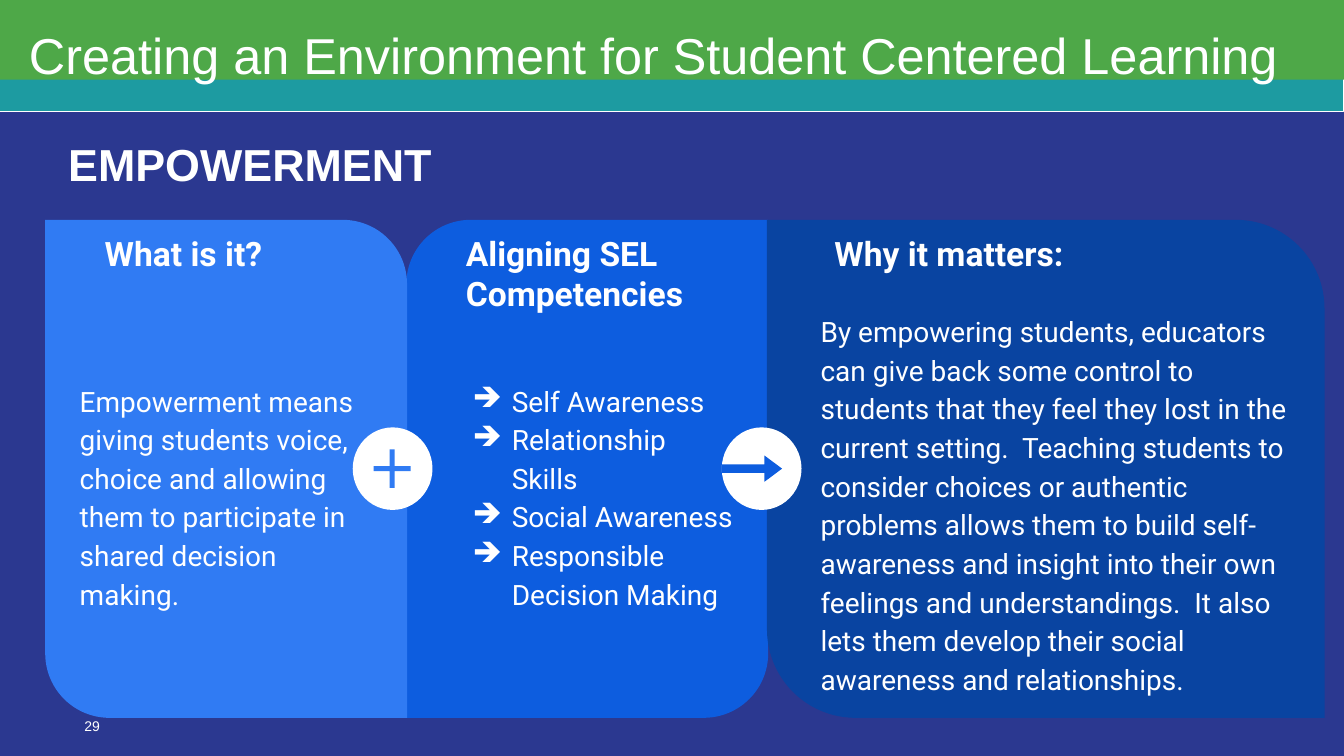
from pptx import Presentation
from pptx.dml.color import RGBColor
from pptx.enum import shapes, text
from pptx.oxml import parse_xml
from pptx.oxml.ns import nsdecls
from pptx.util import Cm, Pt

NAVY = RGBColor(0x2B, 0x38, 0x90)
TEAL = RGBColor(0x1D, 0x9B, 0xA1)
GREEN = RGBColor(0x4E, 0xA8, 0x48)
SKY = RGBColor(0x30, 0x7B, 0xF3)
BLUE = RGBColor(0x0D, 0x5D, 0xDF)
DEEP = RGBColor(0x09, 0x44, 0xA1)
WHITE = RGBColor(0xFF, 0xFF, 0xFF)
KIND = shapes.MSO_SHAPE
WIDE, HIGH = 33.87, 19.05


class Deck:
    """Holds the style and the current slide; lengths are in centimetres."""

    def __init__(self):
        self.prs = Presentation()
        self.prs.slide_width, self.prs.slide_height = Cm(WIDE), Cm(HIGH)
        self.slide = self.prs.slides.add_slide(self.prs.slide_layouts[5])
        fill = self.slide.background.fill
        fill.solid()
        fill.fore_color.rgb = NAVY

    def shape(self, kind, box, color, adj=(), line=None):
        item = self.slide.shapes.add_shape(kind, *map(Cm, box))
        item.shadow.inherit = False
        item.fill.solid()
        item.fill.fore_color.rgb = color
        if line:
            item.line.color.rgb = line
            item.line.width = Pt(0.75)
        else:
            item.line.fill.background()
        for i, value in enumerate(adj):
            item.adjustments[i] = value

    def put(self, frame, lines, size, font, bold=False, space=None,
            after=None, bullet=None):
        for i, words in enumerate(lines):
            para = frame.paragraphs[0] if i == 0 else frame.add_paragraph()
            para.alignment = text.PP_ALIGN.LEFT
            if space:
                para.line_spacing = space
            if after:
                para.space_after = Pt(after)
            if bullet:
                self.mark(para, bullet)
            run = para.add_run()
            run.text = words
            run.font.size, run.font.name = Pt(size), font
            run.font.bold = bold
            run.font.color.rgb = WHITE

    def mark(self, para, sign):
        props = para._p.get_or_add_pPr()
        props.set("marL", str(Cm(1.27)))
        props.set("indent", str(Cm(-0.99)))
        ns = nsdecls("a")
        props.append(parse_xml(
            f'<a:buClr {ns}><a:srgbClr val="{WHITE}"/></a:buClr>'))
        props.append(parse_xml(f'<a:buChar {ns} char="{sign}"/>'))

    def inset(self, frame, side, end):
        frame.word_wrap = True
        frame.margin_left = frame.margin_right = Cm(side)
        frame.margin_top = frame.margin_bottom = Cm(end)

    def label(self, box, lines, size, font="Roboto", pad=0.33, **style):
        frame = self.slide.shapes.add_textbox(*map(Cm, box)).text_frame
        self.inset(frame, pad, pad)
        self.put(frame, lines, size, font, **style)

    def title(self, box, words):
        item = self.slide.shapes.title
        item.left, item.top, item.width, item.height = map(Cm, box)
        frame = item.text_frame
        frame.auto_size = text.MSO_AUTO_SIZE.NONE
        frame.vertical_anchor = text.MSO_ANCHOR.MIDDLE
        self.inset(frame, 1.52, 0)
        self.put(frame, [words], 36, "Arial", space=0.9)
        # Bring the title in front of the bands
        self.slide.shapes._spTree.append(item._element)

    def panel(self, left, wide, color, adj, head, shift, span):
        self.shape(KIND.ROUND_2_DIAG_RECTANGLE, (left, 5.54, wide, 12.55),
                   color, adj)
        self.label((left + shift, 5.54, span, 3.68), [head], 24, bold=True)

    def disc(self, left):
        self.shape(KIND.OVAL, (left, 10.77, 2.01, 2.08), WHITE)


def main():
    deck = Deck()

    # Header bands, page number and title
    deck.shape(KIND.RECTANGLE, (0, 1.3, WIDE, 1.52), TEAL, line=WHITE)
    deck.shape(KIND.RECTANGLE, (0, 0, WIDE, 2.01), GREEN)
    deck.label((2.13, 18.08, 1.04, 0.53), ["29"], 10, "Arial", 0)
    deck.title((-0.79, 0.2, 35.15, 2.54),
               "Creating an Environment for Student Centered Learning")

    # Middle panel: competencies
    deck.panel(10.24, 9.12, BLUE, (0.178, 0),
               "Aligning SEL Competencies", 1.17, 6.81)
    deck.label((11.3, 9.22, 7.59, 4.09),
               ["Self Awareness", "Relationship Skills", "Social Awareness",
                "Responsible Decision Making"], 20, space=1.15, bullet="➔")

    # Left panel: meaning
    deck.panel(1.14, 9.12, SKY, (0, 0.178), "What is it?", 1.17, 6.81)
    deck.label((1.68, 9.22, 8.05, 4.09),
               ["Empowerment means giving students voice, choice and allowing "
                "them to participate in shared decision making."],
               20, space=1.15, after=21)

    # Right panel: reasons
    deck.panel(19.33, 14.05, DEEP, (0, 0.178), "Why it matters:", 1.37, 11.33)
    deck.label((20.35, 7.47, 12.7, 4.09),
               ["By empowering students, educators can give back some control "
                "to students that they feel they lost in the current setting.  "
                "Teaching students to consider choices or authentic problems "
                "allows them to build self-awareness and insight into their "
                "own feelings and understandings.  It also lets them develop "
                "their social awareness and relationships."],
               20, space=1.15, after=21)

    # Signs between the panels
    deck.disc(18.19)
    deck.shape(KIND.RIGHT_ARROW, (18.19, 11.48, 1.52, 0.66), BLUE, (0.32, 0.67))
    deck.disc(8.89)
    deck.shape(KIND.MATH_PLUS, (9.25, 11.15, 1.27, 1.32), SKY, (0.099,))

    # Subtitle
    deck.label((1.47, 3.2, 12.07, 1.88), ["EMPOWERMENT"], 32, "Arial", 0.25,
               bold=True)

    deck.prs.save("out.pptx")


if __name__ == "__main__":
    main()
